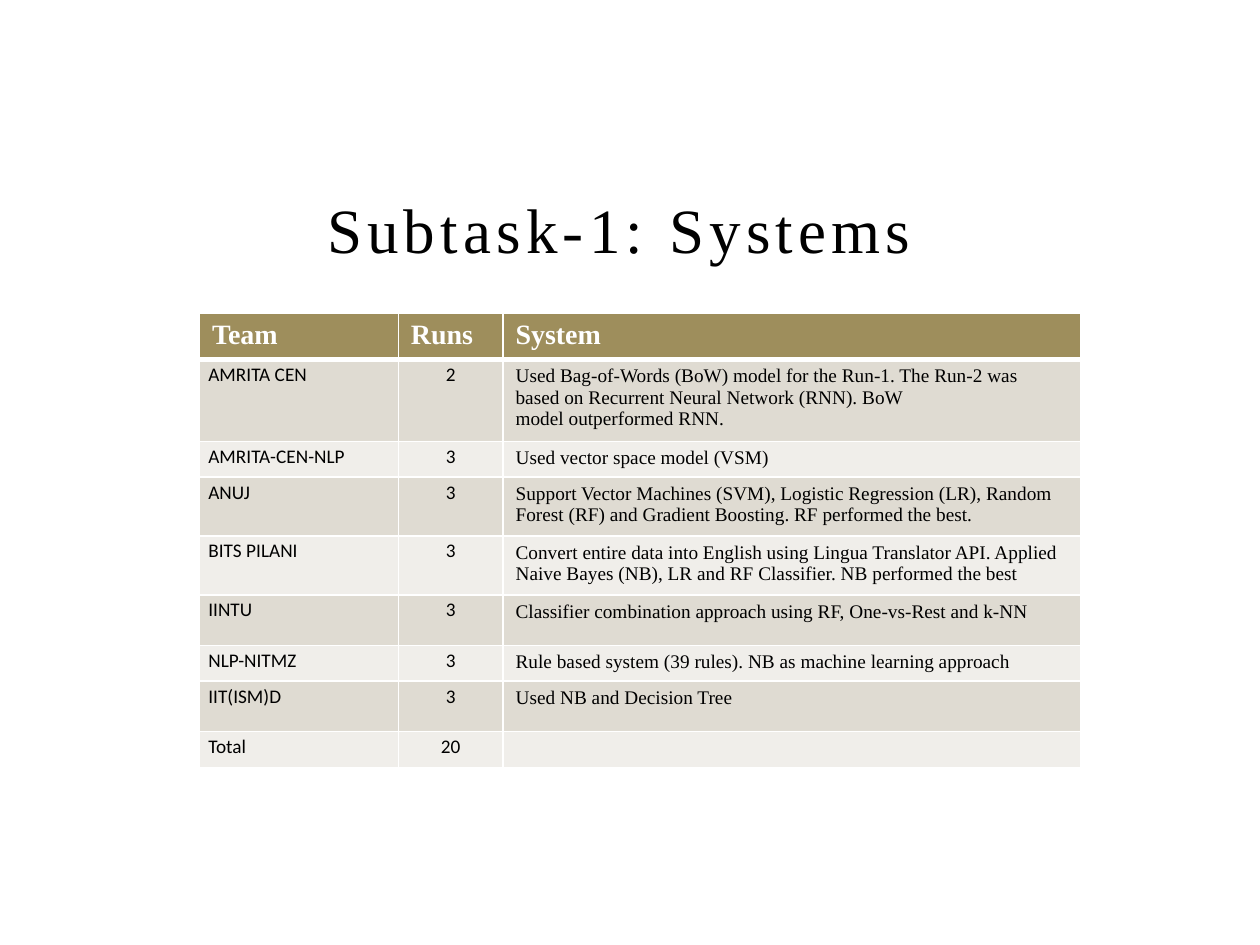
from dataclasses import dataclass

from lxml import etree
from pptx import Presentation
from pptx import util as u
from pptx.dml import color
from pptx.enum import text
from pptx.oxml import ns


@dataclass(frozen=True)
class Theme:
    """Colours, fonts and type sizes of the slide."""
    ink: str = "000000"
    paper: str = "FFFFFF"
    header: str = "9E8E5C"
    bands: tuple = ("DFDBD2", "F0EEEA")
    serif: str = "Times New Roman"
    sans: str = "Calibri"
    title_size: int = 36
    header_size: int = 16
    body_size: int = 11
    title_spacing: int = 3


THEME = Theme()
HEADINGS = ("Team", "Runs", "System")
TEAMS = [
    ("AMRITA CEN", "2", "Used Bag-of-Words (BoW) model for the Run-1. The Run-2 was\n"
     "based on Recurrent Neural Network (RNN). BoW\nmodel outperformed RNN."),
    ("AMRITA-CEN-NLP", "3", "Used vector space model (VSM)"),
    ("ANUJ", "3", "Support Vector Machines (SVM), Logistic Regression (LR), Random "
     "Forest (RF) and Gradient Boosting. RF performed the best."),
    ("BITS PILANI", "3", "Convert entire data into English using Lingua Translator API. "
     "Applied Naive Bayes (NB), LR and RF Classifier. NB performed the best"),
    ("IINTU", "3", "Classifier combination approach using RF, One-vs-Rest and k-NN"),
    ("NLP-NITMZ", "3", "Rule based system (39 rules). NB as machine learning approach"),
    ("IIT(ISM)D", "3", "Used NB and Decision Tree"),
    ("Total", "20", ""),
]
COLUMN_WIDTHS = (4.01, 2.11, 11.64)
ROW_HEIGHTS = (0.89, 1.55, 0.69, 1.12, 1.12, 1.02, 0.69, 1.02, 0.69)


def style(paragraph, family, size, ink, bold=False):
    """Set the font of a whole paragraph, including its empty end."""
    font = paragraph.font
    font.name, font.size, font.bold = family, u.Pt(size), bold
    font.color.rgb = color.RGBColor.from_string(ink)
    paragraph._p.get_or_add_endParaRPr().set("sz", str(size * 100))


def set_borders(cell, bottom_width):
    """Draw paper-coloured borders round a cell."""
    properties = cell._tc.get_or_add_tcPr()
    for index, (side, width) in enumerate(
            (("lnL", 1), ("lnR", 1), ("lnT", 1), ("lnB", bottom_width))):
        border = etree.Element(ns.qn(f"a:{side}"), w=str(u.Pt(width)))
        fill = etree.SubElement(border, ns.qn("a:solidFill"))
        etree.SubElement(fill, ns.qn("a:srgbClr"), val=THEME.paper)
        properties.insert(index, border)


def fill_cell(cell, words, band, family, size, ink, bold=False, bottom_width=1):
    """Write, style, colour and border one table cell."""
    cell.text = words
    for paragraph in cell.text_frame.paragraphs:
        style(paragraph, family, size, ink, bold)
    cell.fill.solid()
    cell.fill.fore_color.rgb = color.RGBColor.from_string(band)
    set_borders(cell, bottom_width)


def add_title(slide, words, left, top, width, height):
    """Place the letter-spaced title at the bottom of its box."""
    frame = slide.shapes.add_textbox(*map(u.Cm, (left, top, width, height))).text_frame
    frame.word_wrap = True
    frame.vertical_anchor = text.MSO_ANCHOR.BOTTOM
    paragraph = frame.paragraphs[0]
    paragraph.alignment = text.PP_ALIGN.CENTER
    title = paragraph.add_run()
    title.text = words
    style(paragraph, THEME.serif, THEME.title_size, THEME.ink)
    title.font._element.set("spc", str(THEME.title_spacing * 100))


def add_systems(slide, left, top):
    """Place the table of teams, runs and systems."""
    box = (left, top, sum(COLUMN_WIDTHS), sum(ROW_HEIGHTS))
    systems = slide.shapes.add_table(
        len(ROW_HEIGHTS), len(COLUMN_WIDTHS), *map(u.Cm, box)).table
    for column, width in zip(systems.columns, COLUMN_WIDTHS):
        column.width = u.Cm(width)
    for row, height in zip(systems.rows, ROW_HEIGHTS):
        row.height = u.Cm(height)
    for column, heading in enumerate(HEADINGS):
        fill_cell(systems.cell(0, column), heading, THEME.header, THEME.serif,
                  THEME.header_size, THEME.paper, bold=True, bottom_width=3)
    for row, team in enumerate(TEAMS, start=1):
        band = THEME.bands[(row - 1) % 2]
        for column, words in enumerate(team):
            cell = systems.cell(row, column)
            family = THEME.serif if column == 2 else THEME.sans
            fill_cell(cell, words, band, family, THEME.body_size, THEME.ink)
            if column < 2:
                cell.margin_left = cell.margin_right = u.Cm(0.18)
                cell.margin_top = cell.margin_bottom = 0
                cell.text_frame.paragraphs[0].line_spacing = 1.15
            if column == 1:
                cell.text_frame.paragraphs[0].alignment = text.PP_ALIGN.CENTER


def main():
    """Build and save the slide."""
    deck = Presentation()
    deck.slide_width, deck.slide_height = u.Cm(25.4), u.Cm(19.05)
    slide = deck.slides.add_slide(deck.slide_layouts[6])
    add_title(slide, "Subtask-1: Systems ", 3.81, 3.6, 17.78, 1.9)
    add_systems(slide, 4.02, 6.31)
    deck.save("out.pptx")


if __name__ == "__main__":
    main()
